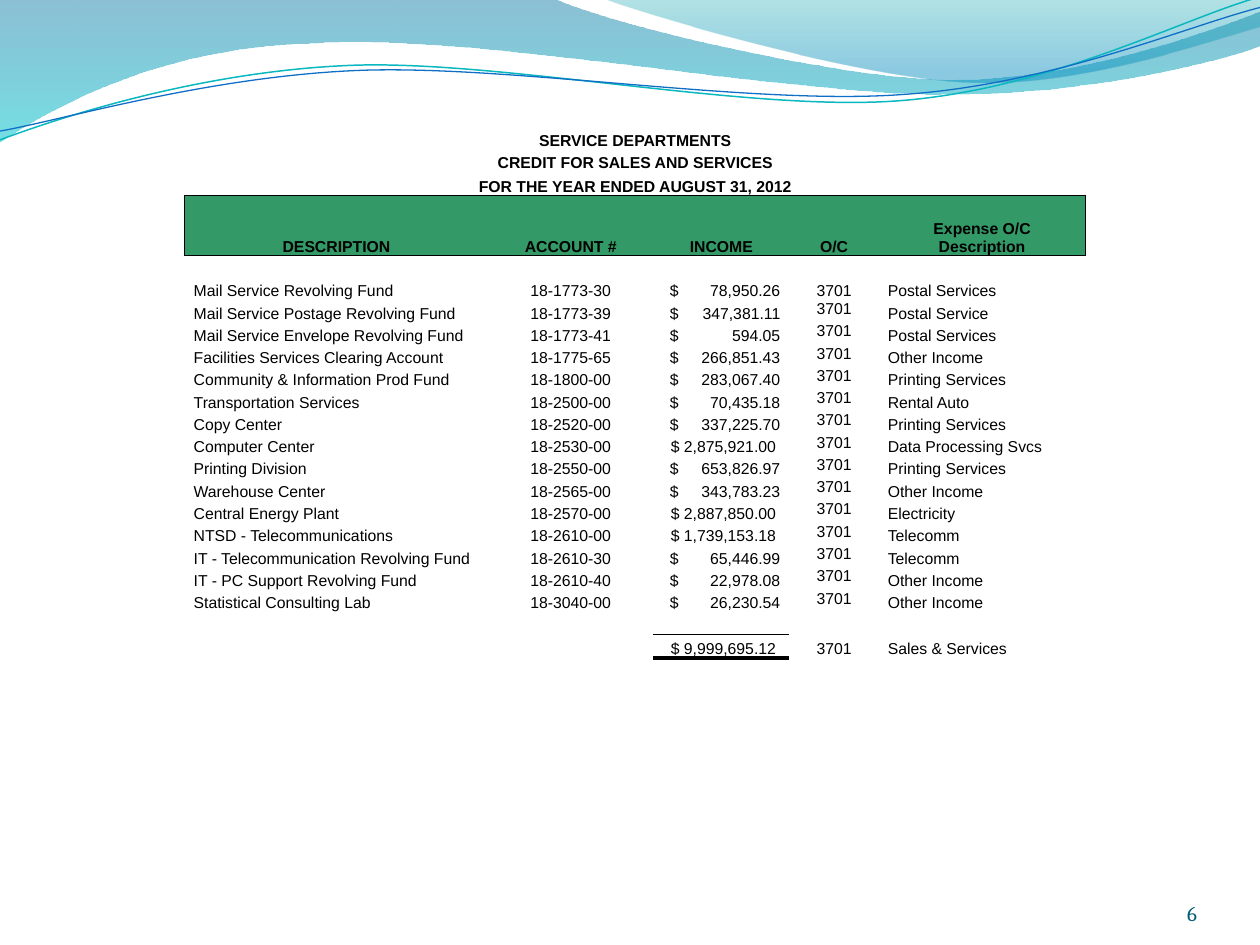
"""Build the service departments credit slide."""
from dataclasses import dataclass
from math import cos, radians, sin

from lxml.etree import SubElement
from pptx import Presentation
from pptx.dml.color import RGBColor
from pptx.enum.text import MSO_ANCHOR, PP_ALIGN
from pptx.oxml.ns import qn
from pptx.util import Pt


@dataclass(frozen=True)
class Theme:
    ink: str = "000000"
    header: str = "339966"
    number: str = "045D75"
    teal: str = "0AB8BF"
    blue: str = "0F6FC6"
    deep_wave: tuple = ((0, "0074A1", 45), (1, "00C6CF", 55))
    pale_wave: tuple = ((0, "00A1A9", 30), (0.8, "008BBF", 45))
    body_font: str = "Arial"
    number_font: str = "Cambria"
    body_size: float = 9
    number_size: float = 12
    table_style: str = "{2D5ABB26-0587-4C30-8999-92F81FD0307C}"


LEFT, CENTER, RIGHT = PP_ALIGN.LEFT, PP_ALIGN.CENTER, PP_ALIGN.RIGHT
TOP, BOTTOM = MSO_ANCHOR.TOP, MSO_ANCHOR.BOTTOM

DEEP_WAVE = [(0, 0), (316.8, -0.7), (342.7, 12.2, 478.1, 45.4, 545.8, 45.4),
             (614.2, 45.4, 689.8, 18.7, 720, 6.5), (720.7, 25.9),
             (707.8, 31.7, 626.4, 54.7, 537.1, 54), (447.8, 54, 275, 20.2, 185, 24.5),
             (92.9, 25.9, 33.1, 59.8, -0.7, 81.4)]
PALE_WAVE = [(344.9, -0.7), (366.5, 7.9, 491, 44.6, 553.7, 46.8),
             (616.3, 49.7, 691.9, 23, 720, 15.1), (720, 0)]
TEAL_CURVE = [(0, 79.9), (34.6, 67, 113.8, 41, 199.4, 37.4),
              (284.4, 33.8, 427, 64.1, 513.4, 57.6), (599.8, 51.1, 675.4, 10.8, 718.6, -1.4)]
BLUE_CURVE = [(0, 74.9), (33.8, 69.1, 118.1, 43.9, 203.8, 40.3),
              (290.2, 36.7, 429.8, 60.5, 516.2, 54), (601.9, 48.2, 677.5, 15.1, 720, 4.3)]

TITLES = ["SERVICE DEPARTMENTS", "CREDIT FOR SALES AND SERVICES",
          "FOR THE YEAR ENDED AUGUST 31, 2012"]
HEADINGS = ["DESCRIPTION", "ACCOUNT #", "INCOME", "O/C", "Expense O/C Description"]
FUNDS = [
    ("Mail Service Revolving Fund", "18-1773-30", "78,950.26", "Postal Services"),
    ("Mail Service Postage Revolving Fund", "18-1773-39", "347,381.11", "Postal Service"),
    ("Mail Service Envelope Revolving Fund", "18-1773-41", "594.05", "Postal Services"),
    ("Facilities Services Clearing Account", "18-1775-65", "266,851.43", "Other Income"),
    ("Community & Information Prod Fund", "18-1800-00", "283,067.40", "Printing Services"),
    ("Transportation Services", "18-2500-00", "70,435.18", "Rental Auto"),
    ("Copy Center", "18-2520-00", "337,225.70", "Printing Services"),
    ("Computer Center", "18-2530-00", "2,875,921.00", "Data Processing Svcs"),
    ("Printing Division", "18-2550-00", "653,826.97", "Printing Services"),
    ("Warehouse Center", "18-2565-00", "343,783.23", "Other Income"),
    ("Central Energy Plant", "18-2570-00", "2,887,850.00", "Electricity"),
    ("NTSD - Telecommunications", "18-2610-00", "1,739,153.18", "Telecomm"),
    ("IT - Telecommunication Revolving Fund", "18-2610-30", "65,446.99", "Telecomm"),
    ("IT - PC Support Revolving Fund", "18-2610-40", "22,978.08", "Other Income"),
    ("Statistical Consulting Lab", "18-3040-00", "26,230.54", "Other Income"),
]
TOTAL = ("", "", "9,999,695.12", "Sales & Services")
OBJECT_CODE = "3701"
COLUMN_WIDTHS = [173.5, 94.3, 77.8, 51.1, 118.1]
ROW_HEIGHT, AMOUNT_TAB, TILT = 12.75, 63.3, -2.7
HEADER_TOP, HEADER_ROW, FIRST_FUND = 3, 4, 6
TOTAL_ROW = FIRST_FUND + len(FUNDS) + 1


def turn(segments, center, degrees):
    """Return the segments turned clockwise about a center."""
    cx, cy = center
    c, s = cos(radians(degrees)), sin(radians(degrees))
    return [tuple(v for x, y in zip(seg[::2], seg[1::2])
                  for v in (cx + (x - cx) * c - (y - cy) * s,
                            cy + (x - cx) * s + (y - cy) * c)) for seg in segments]


class SlideBuilder:
    """Hold the theme and the current slide."""

    def __init__(self, slide, theme):
        self.s, self.theme = slide, theme

    def outline(self, segments, close):
        """Add a freeform of straight (x, y) and cubic segments."""
        first, *rest = [(Pt(x), Pt(y)) for seg in segments for x, y in zip(seg[::2], seg[1::2])]
        builder = self.s.shapes.build_freeform(*first)
        builder.add_line_segments(rest, close=close)
        sp = builder.convert_to_shape()
        sp.shadow.inherit = False
        lines = iter(list(sp._element.iter(qn("a:lnTo"))))
        for seg in segments[1:]:
            line = next(lines)
            if len(seg) == 6:
                line.tag = qn("a:cubicBezTo")
                for _ in range(2):
                    extra = next(lines)
                    line.append(extra[0])
                    extra.getparent().remove(extra)
        return sp

    def wave(self, segments, stops):
        """Add a closed wave with a translucent vertical gradient."""
        sp = self.outline(segments, True)
        sp.line.fill.background()
        sp.fill.gradient()
        sp.fill.gradient_angle = 270
        for stop, (position, color, _) in zip(sp.fill.gradient_stops, stops):
            stop.position = position
            stop.color.rgb = RGBColor.from_string(color)
        colors = sp._element.spPr.find(qn("a:gradFill")).iter(qn("a:srgbClr"))
        for clr, (_, _, alpha) in zip(colors, stops):
            SubElement(clr, qn("a:alpha"), val=str(alpha * 1000))

    def curve(self, segments, center, color, width):
        """Add an open curved line in a tilted frame."""
        sp = self.outline(turn(segments, center, -TILT), False)
        sp.rotation = TILT
        sp.fill.background()
        sp.line.color.rgb = RGBColor.from_string(color)
        sp.line.width = Pt(width)

    def run(self, p, text, font, size, color, bold=False):
        """Add a styled run to a paragraph."""
        r = p.add_run()
        r.text = text
        r.font.name, r.font.size, r.font.bold = font, Pt(size), bold
        r.font.color.rgb = RGBColor.from_string(color)

    def page_number(self, text, left, top, width, height):
        """Add the page number."""
        tf = self.s.shapes.add_textbox(Pt(left), Pt(top), Pt(width), Pt(height)).text_frame
        tf.margin_left = tf.margin_right = tf.margin_top = tf.margin_bottom = 0
        tf.word_wrap, tf.vertical_anchor = True, BOTTOM
        p = tf.paragraphs[0]
        p.alignment = RIGHT
        self.run(p, text, self.theme.number_font, self.theme.number_size, self.theme.number)

    def table(self, left, top, widths, heights):
        """Add a plain table with compact empty cells."""
        frame = self.s.shapes.add_table(len(heights), len(widths), Pt(left), Pt(top),
                                        Pt(sum(widths)), Pt(sum(heights)))
        table = frame.table
        table.first_row = table.horz_banding = False
        table._tbl.tblPr.find(qn("a:tableStyleId")).text = self.theme.table_style
        for column, width in zip(table.columns, widths):
            column.width = Pt(width)
        for row, height in zip(table.rows, heights):
            row.height = Pt(height)
        for cell in table.iter_cells():
            cell.margin_left = cell.margin_right = Pt(5.2)
            cell.margin_top = cell.margin_bottom = 0
            cell.fill.background()
            SubElement(cell.text_frame.paragraphs[0]._p, qn("a:endParaRPr"),
                       sz=str(int(self.theme.body_size * 100)))
        return table

    def text(self, cell, text, align=LEFT, bold=False, anchor=BOTTOM):
        """Write text in a cell."""
        cell.vertical_anchor = anchor
        p = cell.text_frame.paragraphs[0]
        p.alignment = align
        if text:
            self.run(p, text, self.theme.body_font, self.theme.body_size,
                     self.theme.ink, bold)

    def amount(self, cell, value):
        """Write a dollar amount, with a tab after the sign if it is below a million."""
        if value.count(",") == 2:
            self.text(cell, f"$ {value} ", RIGHT)
            return
        cell.margin_left = Pt(9.5)
        self.text(cell, "$\t" + value)
        tabs = SubElement(cell.text_frame.paragraphs[0]._p.get_or_add_pPr(), qn("a:tabLst"))
        SubElement(tabs, qn("a:tab"), pos=str(Pt(AMOUNT_TAB)), algn="r")

    def borders(self, cell, **widths):
        """Draw the given cell borders and clear the other sides."""
        tcPr = cell._tc.get_or_add_tcPr()
        for i, side in enumerate("LRTB"):
            ln = SubElement(tcPr, qn("a:ln" + side), w=str(Pt(widths.get(side, 0))))
            if side in widths:
                fill = SubElement(ln, qn("a:solidFill"))
                SubElement(fill, qn("a:srgbClr"), val=self.theme.ink)
            else:
                SubElement(ln, qn("a:noFill"))
            tcPr.insert(i, ln)


def fill_table(b, table):
    """Write titles, header, funds and total."""
    last = len(COLUMN_WIDTHS) - 1
    for row, title in enumerate(TITLES):
        table.cell(row, 0).merge(table.cell(row, last))
        b.text(table.cell(row, 0), title, CENTER, True)
    for col, heading in enumerate(HEADINGS):
        b.text(table.cell(HEADER_ROW, col), heading, CENTER, True)
        table.cell(HEADER_ROW, col).margin_left = table.cell(HEADER_ROW, col).margin_right = Pt(7)
        b.borders(table.cell(HEADER_TOP - 1, col), B=1)
        b.borders(table.cell(HEADER_ROW + 1, col), T=1)
        for row, edge in ((HEADER_TOP, "T"), (HEADER_ROW, "B")):
            cell = table.cell(row, col)
            cell.fill.solid()
            cell.fill.fore_color.rgb = RGBColor.from_string(b.theme.header)
            side = {0: {"L": 1}, last: {"R": 1}}.get(col, {})
            b.borders(cell, **side, **{edge: 1})
    rows = [*enumerate(FUNDS, FIRST_FUND), (TOTAL_ROW, TOTAL)]
    for row, (name, account, income, expense) in rows:
        b.text(table.cell(row, 0), name)
        b.text(table.cell(row, 1), account, CENTER)
        b.amount(table.cell(row, 2), income)
        b.text(table.cell(row, 3), OBJECT_CODE, CENTER,
               anchor=BOTTOM if row in (FIRST_FUND, TOTAL_ROW) else TOP)
        b.text(table.cell(row, 4), expense)
    b.borders(table.cell(TOTAL_ROW - 1, 2), B=1)
    b.borders(table.cell(TOTAL_ROW, 2), T=1, B=2.25)


def main():
    """Build and save the slide."""
    prs = Presentation()
    prs.slide_width, prs.slide_height = Pt(720), Pt(540)
    theme = Theme()
    b = SlideBuilder(prs.slides.add_slide(prs.slide_layouts[6]), theme)
    b.wave(DEEP_WAVE, theme.deep_wave)
    b.wave(PALE_WAVE, theme.pale_wave)
    b.curve(TEAL_CURVE, (359.3, 41.4), theme.teal, 0.85)
    b.curve(BLUE_CURVE, (359.6, 42.5), theme.blue, 0.75)
    b.page_number("6", 624, 500.4, 60, 28.8)
    heights = [ROW_HEIGHT] * (TOTAL_ROW + 1)
    heights[2] = heights[HEADER_ROW] = heights[TOTAL_ROW] = 13.5
    fill_table(b, b.table(105.5, 72.7, COLUMN_WIDTHS, heights))
    prs.save("out.pptx")


if __name__ == "__main__":
    main()
